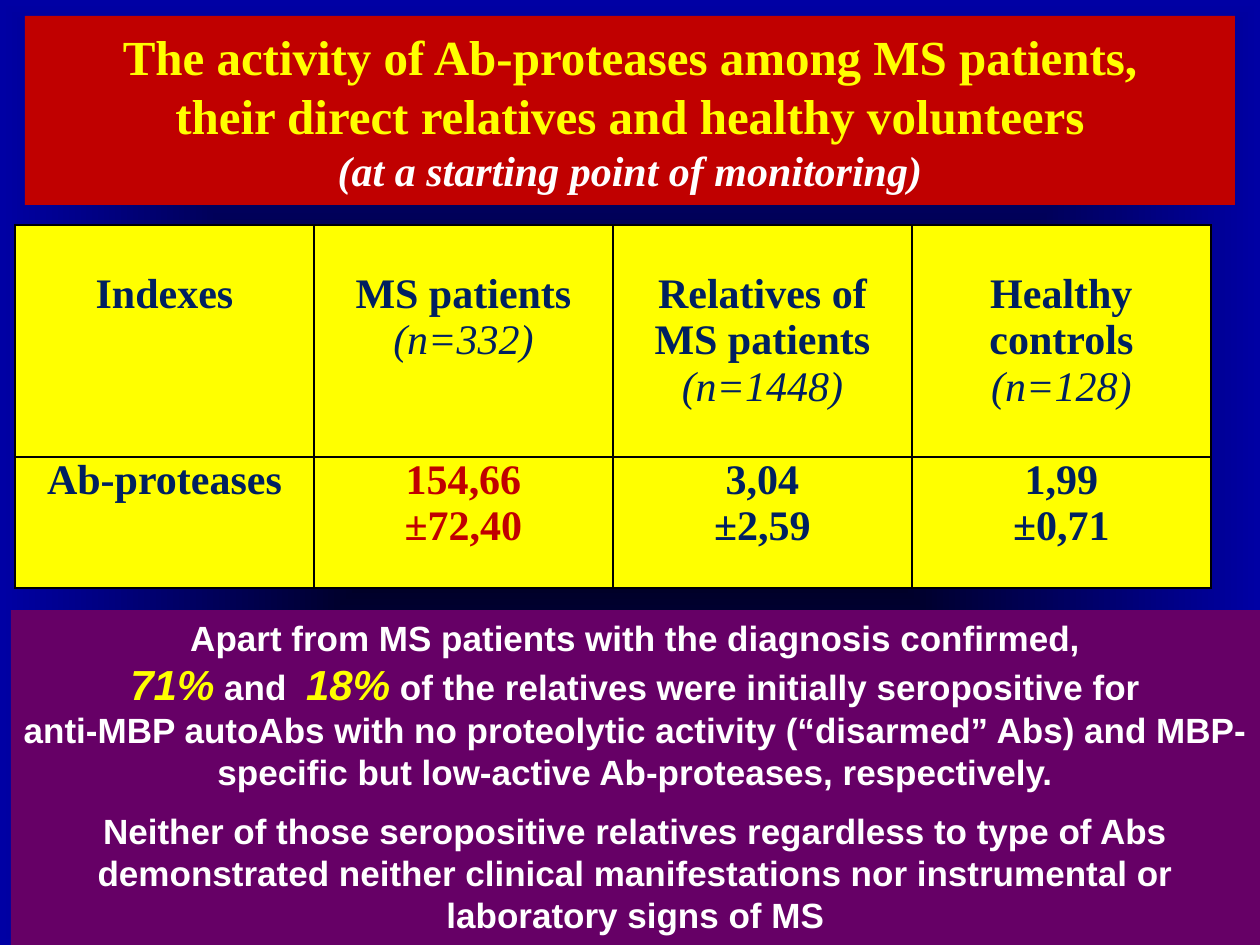
from lxml import etree
from pptx import Presentation
from pptx import util as u
from pptx.dml.color import RGBColor
from pptx.enum import shapes, text
from pptx.oxml import parse_xml
from pptx.oxml.ns import nsdecls, qn

YELLOW, WHITE, RED, NAVY = "FFFF00", "FFFFFF", "C00000", "002060"


def px(n):
    return u.Inches(n / 126)


def rgb(value):
    return RGBColor.from_string(value)


def add_text(p, content, font="Times New Roman", size=24, color=WHITE, bold=True, italic=False):
    for i, line in enumerate(content.split("\n")):
        if i:
            p.add_line_break()
        if line:
            r = p.add_run()
            r.text = line
            r.font.name = font
            r.font.size = u.Pt(size)
            r.font.bold = bold
            r.font.italic = italic
            r.font.color.rgb = rgb(color)


class Deck:
    def __init__(self, width, height):
        self.prs = Presentation()
        self.prs.slide_width, self.prs.slide_height = px(width), px(height)
        self.s = self.prs.slides.add_slide(self.prs.slide_layouts[6])

    def background(self, inner, outer):
        fill = self.s.background.fill
        fill.gradient()
        for stop, color in zip(fill.gradient_stops, (inner, outer)):
            stop.color.rgb = rgb(color)
        lin = next(self.s.element.iter(qn("a:lin")))
        lin.getparent().replace(lin, parse_xml(
            f'<a:path {nsdecls("a")} path="shape">'
            '<a:fillToRect l="50000" t="50000" r="50000" b="50000"/></a:path>'))

    def fill_frame(self, tf, paragraphs):
        for i, runs in enumerate(paragraphs):
            p = tf.add_paragraph() if i else tf.paragraphs[0]
            p.alignment = text.PP_ALIGN.CENTER
            for content, fmt in runs:
                add_text(p, content, **fmt)

    def box(self, x, y, w, h, color, paragraphs, anchor):
        sp = self.s.shapes.add_shape(shapes.MSO_SHAPE.RECTANGLE, px(x), px(y), px(w), px(h))
        sp.shadow.inherit = False
        sp.fill.solid()
        sp.fill.fore_color.rgb = rgb(color)
        sp.line.fill.background()
        tf = sp.text_frame
        tf.word_wrap = True
        tf.vertical_anchor = anchor
        self.fill_frame(tf, paragraphs)
        return tf

    def border(self, cell, color):
        tc_pr = cell._tc.get_or_add_tcPr()
        for i, side in enumerate(("lnL", "lnR", "lnT", "lnB")):
            ln = etree.Element(qn(f"a:{side}"), w=str(u.Pt(1)))
            solid = etree.SubElement(ln, qn("a:solidFill"))
            etree.SubElement(solid, qn("a:srgbClr"), val=color)
            tc_pr.insert(i, ln)

    def table(self, x, y, col_width, heights, top_margins, rows, color):
        count = len(rows[0])
        table = self.s.shapes.add_table(
            len(rows), count, px(x), px(y), px(col_width * count), px(sum(heights))).table
        table.first_row = table.horz_banding = False
        for col in table.columns:
            col.width = px(col_width)
        for i, row in enumerate(rows):
            table.rows[i].height = px(heights[i])
            for j, paragraphs in enumerate(row):
                cell = table.cell(i, j)
                cell.margin_left = cell.margin_right = px(9)
                cell.margin_top, cell.margin_bottom = px(top_margins[i]), 0
                cell.fill.solid()
                cell.fill.fore_color.rgb = rgb(color)
                self.border(cell, "000000")
                self.fill_frame(cell.text_frame, paragraphs)


def heading(name, sample=None):
    paragraphs = [[(name, dict(color=NAVY))]]
    if sample:
        paragraphs.append([(sample, dict(color=NAVY, bold=False, italic=True))])
    return paragraphs


def value(mean, deviation, color=NAVY):
    return [[(line, dict(color=color))] for line in (mean, deviation)]


def main():
    deck = Deck(1260, 945)
    deck.background("000000", "0000A4")
    deck.box(25, 16, 1210, 189, RED, [[
        ("The activity of Ab-proteases among MS patients,\n"
         "their direct relatives and healthy volunteers\n", dict(size=28, color=YELLOW)),
        ("(at a starting point of monitoring)", dict(italic=True)),
    ]], text.MSO_ANCHOR.MIDDLE)

    deck.table(15, 225, 299, (232, 131), (46, 0), [
        [heading("Indexes"),
         heading("MS patients", "(n=332)"),
         heading("Relatives of MS patients", "(n=1448)"),
         heading("Healthy controls", "(n=128)")],
        [heading("Ab-proteases"),
         value("154,66", "±72,40", RED),
         value("3,04", "±2,59"),
         value("1,99", "±0,71")],
    ], YELLOW)

    body = dict(font="Arial", size=20)
    share = dict(font="Arial", color=YELLOW, italic=True)
    tf = deck.box(11, 610, 1249, 335, "660066", [
        [("Apart from MS patients with the diagnosis confirmed,", body)],
        [("71%", share), (" and  ", body), ("18%", share),
         (" of the relatives were initially seropositive for", body)],
        [("anti-MBP autoAbs with no proteolytic activity (“disarmed” Abs) and "
          "MBP-specific but low-active Ab-proteases, respectively.", body)],
        [("Neither of those seropositive relatives regardless to type of Abs demonstrated "
          "neither clinical manifestations nor instrumental or laboratory signs of MS", body)],
    ], text.MSO_ANCHOR.TOP)
    tf.paragraphs[-1].space_before = u.Pt(9.5)
    deck.prs.save("out.pptx")


if __name__ == "__main__":
    main()
